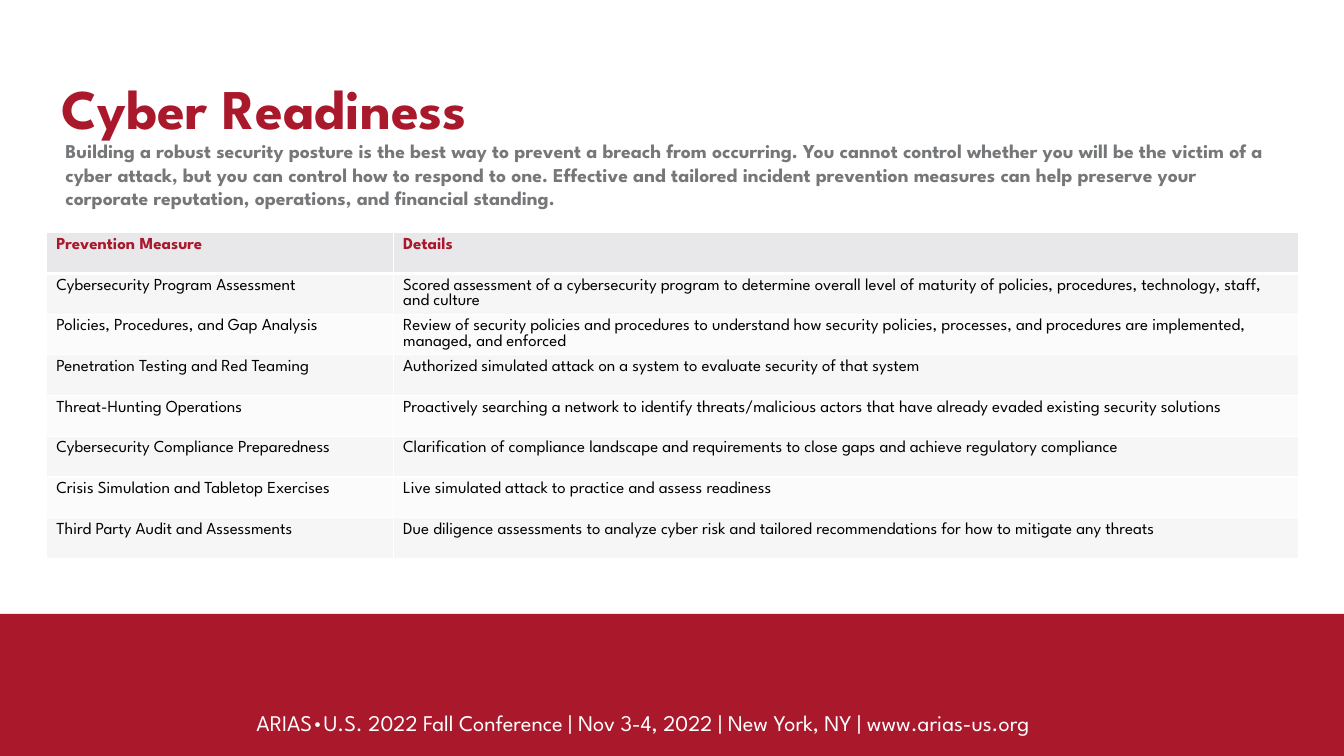
from dataclasses import dataclass

from lxml import etree
from pptx import Presentation
from pptx.dml.color import RGBColor
from pptx.enum import shapes, text
from pptx.oxml import ns
from pptx.util import Pt

TITLE = "Cyber Readiness"
INTRO = (
    "Building a robust security posture is the best way to prevent a breach from occurring. "
    "You cannot control whether you will be the victim of a cyber attack, but you can control "
    "how to respond to one. Effective and tailored incident prevention measures can help "
    "preserve your corporate reputation, operations, and financial standing."
)
FOOTER = "ARIAS•U.S. 2022 Fall Conference | Nov 3-4, 2022 | New York, NY | www.arias-us.org"
MEASURES = [
    ("Prevention Measure", "Details"),
    ("Cybersecurity Program Assessment",
     "Scored assessment of a cybersecurity program to determine overall level of maturity of "
     "policies, procedures, technology, staff, and culture"),
    ("Policies, Procedures, and Gap Analysis",
     "Review of security policies and procedures to understand how security policies, processes, "
     "and procedures are implemented, managed, and enforced"),
    ("Penetration Testing and Red Teaming",
     "Authorized simulated attack on a system to evaluate security of that system"),
    ("Threat-Hunting Operations",
     "Proactively searching a network to identify threats/malicious actors that have already "
     "evaded existing security solutions"),
    ("Cybersecurity Compliance Preparedness",
     "Clarification of compliance landscape and requirements to close gaps and achieve "
     "regulatory compliance"),
    ("Crisis Simulation and Tabletop Exercises",
     "Live simulated attack to practice and assess readiness"),
    ("Third Party Audit and Assessments",
     "Due diligence assessments to analyze cyber risk and tailored recommendations for how to "
     "mitigate any threats"),
]


@dataclass(frozen=True)
class Theme:
    font: str = "League Spartan"
    red: str = "AA182C"
    grey: str = "767779"
    black: str = "000000"
    white: str = "FFFFFF"
    header: str = "E8E8EB"
    bands: tuple = ("F6F6F7", "FBFBFB")
    title_size: float = 40
    footer_size: float = 16
    intro_size: float = 14
    table_size: float = 12
    table_line: float = 10.9


THEME = Theme()
PAGE_SIZE = (960, 540)
BAND = (-2.2, 438.5, 964.8, 113)
FOOTER_BOX = (44.4, 502.6, 830.2, 27.4)
TITLE_BOX = (40.5, 49, 878.4, 117.4)
INTRO_BOX = (43.2, 95.8, 876.2, 31.7)
TABLE_LEFT, TABLE_TOP = 33.1, 166.2
COLUMN_WIDTHS = (247.7, 646.6)
ROW_HEIGHT = 29.1
INSET = 3.6


def write(frame, words, size, color, bold=False, align=text.PP_ALIGN.LEFT, spacing=1.0):
    para = frame.paragraphs[0]
    para.alignment = align
    para.line_spacing = spacing
    span = para.add_run()
    span.text = words
    span.font.name = THEME.font
    span.font.size = Pt(size)
    span.font.bold = bold
    span.font.color.rgb = RGBColor.from_string(color)


def add_text(page, box, words, anchor=text.MSO_ANCHOR.TOP, **style):
    frame = page.shapes.add_textbox(*map(Pt, box)).text_frame
    frame.word_wrap = True
    frame.vertical_anchor = anchor
    frame.margin_left = frame.margin_right = Pt(INSET)
    frame.margin_top = frame.margin_bottom = Pt(INSET)
    write(frame, words, **style)


def add_borders(cell, bottom):
    properties = cell._tc.get_or_add_tcPr()
    for side, width in (("L", 1), ("R", 1), ("T", 1), ("B", bottom)):
        line = etree.SubElement(properties, ns.qn(f"a:ln{side}"), w=str(Pt(width)))
        fill = etree.SubElement(line, ns.qn("a:solidFill"))
        etree.SubElement(fill, ns.qn("a:srgbClr"), val=THEME.white)


def add_measures(page):
    table = page.shapes.add_table(
        len(MEASURES), len(COLUMN_WIDTHS), Pt(TABLE_LEFT), Pt(TABLE_TOP),
        Pt(sum(COLUMN_WIDTHS)), Pt(ROW_HEIGHT * len(MEASURES))).table
    for column, width in zip(table.columns, COLUMN_WIDTHS):
        column.width = Pt(width)
    for row, entries in enumerate(MEASURES):
        table.rows[row].height = Pt(ROW_HEIGHT)
        heading = row == 0
        fill = THEME.header if heading else THEME.bands[(row - 1) % 2]
        for column, words in enumerate(entries):
            cell = table.cell(row, column)
            add_borders(cell, bottom=3 if heading else 1)
            cell.fill.solid()
            cell.fill.fore_color.rgb = RGBColor.from_string(fill)
            write(cell.text_frame, words, THEME.table_size,
                  THEME.red if heading else THEME.black, bold=heading,
                  spacing=1.0 if heading else Pt(THEME.table_line))


def main():
    deck = Presentation()
    deck.slide_width, deck.slide_height = map(Pt, PAGE_SIZE)
    page = deck.slides.add_slide(deck.slide_layouts[6])

    band = page.shapes.add_shape(shapes.MSO_SHAPE.RECTANGLE, *map(Pt, BAND))
    band.shadow.inherit = False
    band.fill.solid()
    band.fill.fore_color.rgb = RGBColor.from_string(THEME.red)
    band.line.fill.background()

    add_text(page, FOOTER_BOX, FOOTER, anchor=text.MSO_ANCHOR.MIDDLE,
             size=THEME.footer_size, color=THEME.white, align=text.PP_ALIGN.CENTER)
    add_text(page, TITLE_BOX, TITLE, size=THEME.title_size, color=THEME.red, bold=True)
    add_measures(page)
    add_text(page, INTRO_BOX, INTRO, size=THEME.intro_size, color=THEME.grey, bold=True)
    deck.save("out.pptx")


if __name__ == "__main__":
    main()
